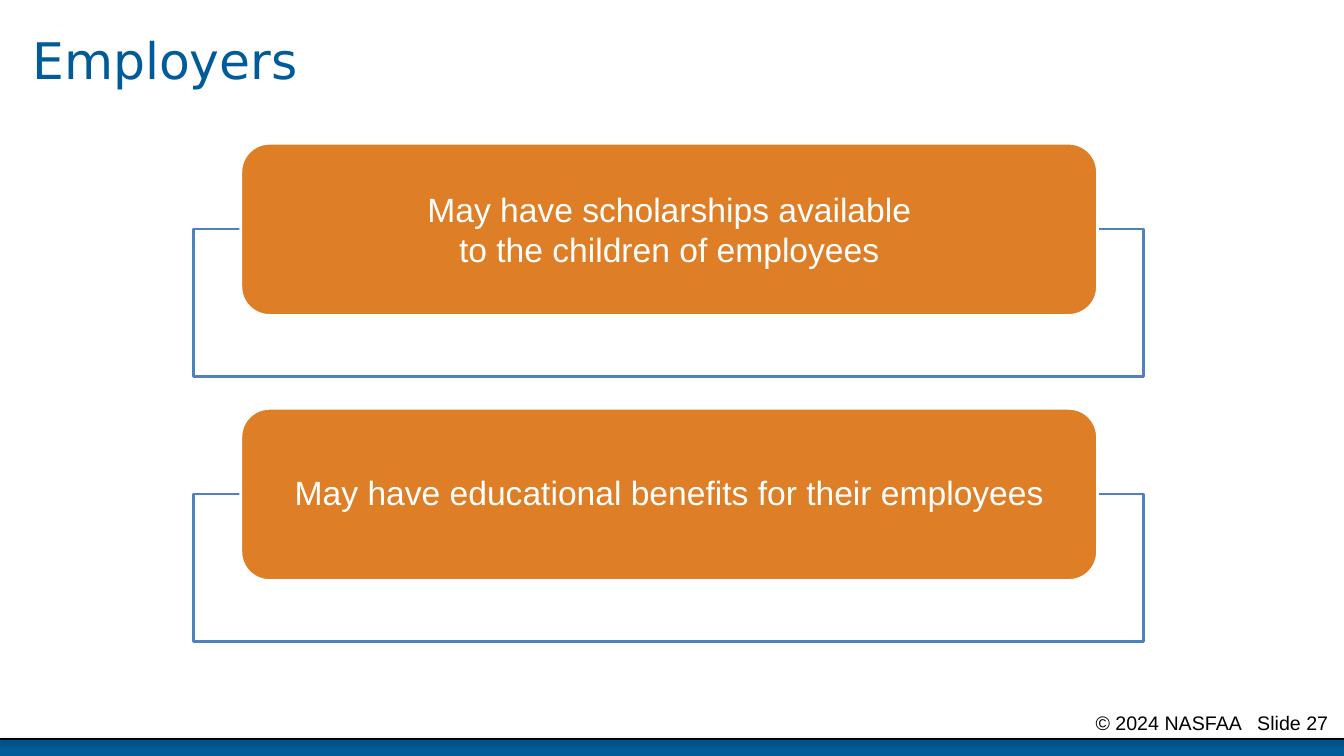
from dataclasses import dataclass

import pptx
import pptx.dml.color
import pptx.enum.shapes
import pptx.enum.text
import pptx.oxml
import pptx.oxml.ns
import pptx.util
from pptx.util import Cm, Pt

Align = pptx.enum.text.PP_ALIGN
Anchor = pptx.enum.text.MSO_ANCHOR
Shape = pptx.enum.shapes.MSO_SHAPE
RGB = pptx.dml.color.RGBColor


@dataclass(frozen=True)
class Theme:
    blue: str = "005B99"
    frame: str = "4F81BD"
    orange: str = "DE7E26"
    white: str = "FFFFFF"
    black: str = "000000"
    head: str = "DejaVu Sans"
    body: str = "Arial"
    title: int = 36
    text: int = 24
    foot: int = 14
    line: int = 2


@dataclass(frozen=True)
class Box:
    x: float
    y: float
    w: float
    h: float

    def cm(self) -> tuple:
        return Cm(self.x), Cm(self.y), Cm(self.w), Cm(self.h)


@dataclass(frozen=True)
class Card:
    text: str
    space: float


THEME = Theme()
WIDTH, HEIGHT = 33.87, 19.05
BAR = 18.62
TOP, STEP = 3.61, 6.68
CARDS = [
    Card("May have scholarships available\vto the children of employees", 1.0),
    Card("May have educational benefits for their employees", 0.9),
]


def style(para, face: str, size: int, color: str) -> None:
    para.font.name = face
    para.font.size = Pt(size)
    para.font.color.rgb = RGB.from_string(color)


def block(slide, kind, box: Box, fill: str, line: str = ""):
    shape = slide.shapes.add_shape(kind, *box.cm())
    shape.shadow.inherit = False
    shape.fill.solid()
    shape.fill.fore_color.rgb = RGB.from_string(fill)
    if line:
        shape.line.color.rgb = RGB.from_string(line)
        shape.line.width = Pt(THEME.line)
    else:
        shape.line.fill.background()
    return shape


def footer(slide) -> None:
    block(slide, Shape.RECTANGLE, Box(0, BAR, WIDTH, HEIGHT - BAR), THEME.blue)
    rule = slide.shapes.add_connector(
        pptx.enum.shapes.MSO_CONNECTOR.STRAIGHT, 0, Cm(BAR), Cm(WIDTH), Cm(BAR))
    rule.line.color.rgb = RGB.from_string(THEME.black)
    rule.line.width = Pt(THEME.line)
    # Soft shadow below the rule
    rule._element.spPr.append(pptx.oxml.parse_xml(
        f'<a:effectLst {pptx.oxml.ns.nsdecls("a")}>'
        f'<a:outerShdw blurRad="{Pt(3.1)}" dist="{Pt(1.6)}" dir="5400000" rotWithShape="0">'
        f'<a:srgbClr val="{THEME.black}"><a:alpha val="38000"/></a:srgbClr>'
        '</a:outerShdw></a:effectLst>'))
    note = slide.shapes.add_textbox(*Box(21.16, 17.78, 12.7, 0.64).cm()).text_frame
    note.word_wrap = True
    note.margin_right = Cm(0.38)
    para = note.paragraphs[0]
    para.text = "© 2024 NASFAA   Slide 27"
    para.alignment = Align.RIGHT
    style(para, THEME.body, THEME.foot, THEME.black)


def heading(slide) -> None:
    title = slide.shapes.title
    title.left, title.top, title.width, title.height = Box(0.56, 0, 32.74, 3.18).cm()
    frame = title.text_frame
    frame.vertical_anchor = Anchor.MIDDLE
    para = frame.paragraphs[0]
    para.text = "Employers"
    para.alignment = Align.LEFT
    para.line_spacing = 0.9
    style(para, THEME.head, THEME.title, THEME.blue)


def draw(slide, card: Card, top: float) -> None:
    block(slide, Shape.RECTANGLE, Box(4.88, top + 2.16, 23.93, 3.71),
          THEME.white, THEME.frame)
    label = block(slide, Shape.ROUNDED_RECTANGLE, Box(6.07, top, 21.59, 4.34),
                  THEME.orange, THEME.white)
    frame = label.text_frame
    frame.word_wrap = True
    frame.vertical_anchor = Anchor.MIDDLE
    frame.margin_left = frame.margin_right = Cm(0.63)
    frame.margin_top = frame.margin_bottom = 0
    para = frame.paragraphs[0]
    para.text = card.text
    para.alignment = Align.CENTER
    para.line_spacing = card.space
    style(para, THEME.body, THEME.text, THEME.white)


def main() -> None:
    deck = pptx.Presentation()
    deck.slide_width, deck.slide_height = Cm(WIDTH), Cm(HEIGHT)
    slide = deck.slides.add_slide(deck.slide_layouts.get_by_name("Title Only"))
    footer(slide)
    heading(slide)
    # Framed cards, top to bottom
    for i, card in enumerate(CARDS):
        draw(slide, card, TOP + i * STEP)
    deck.save("out.pptx")


if __name__ == "__main__":
    main()
